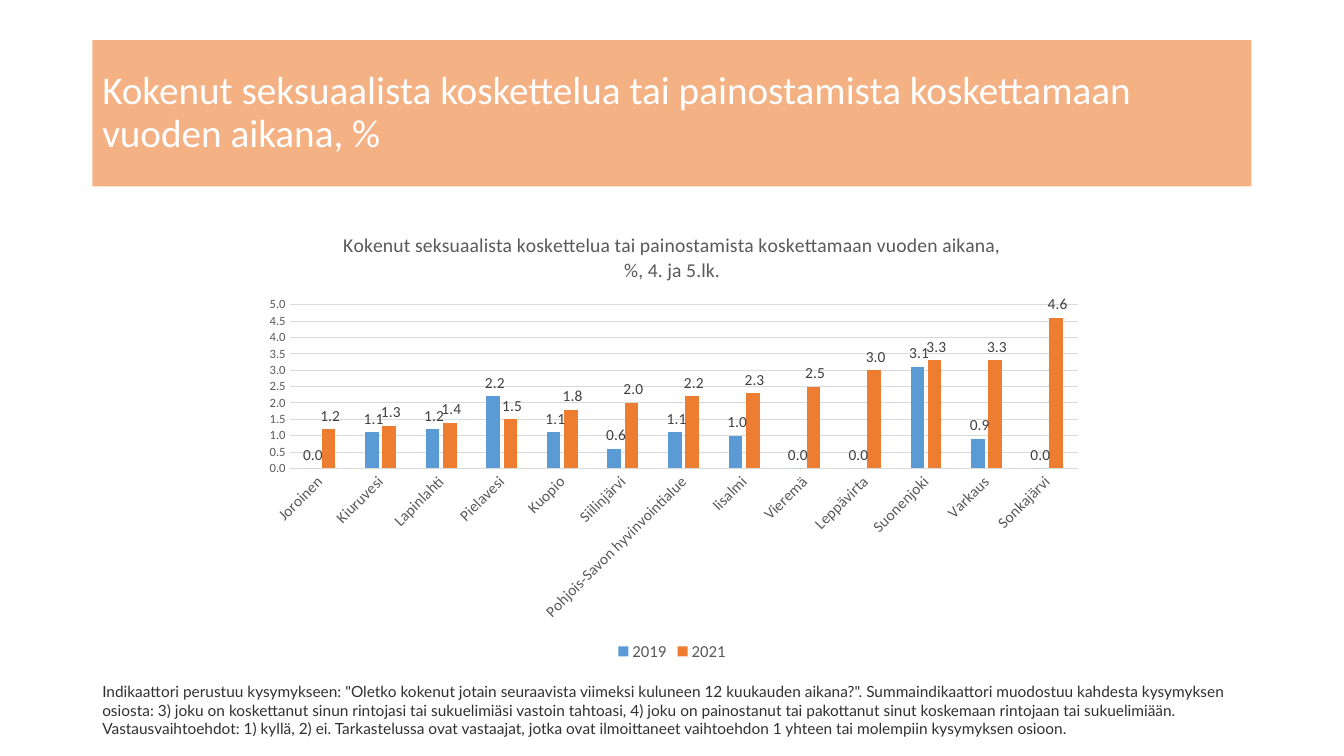
from pptx import Presentation
from pptx.chart.data import CategoryChartData
from pptx.dml.color import RGBColor
from pptx.enum.chart import XL_CHART_TYPE, XL_LABEL_POSITION, XL_LEGEND_POSITION, XL_TICK_MARK
from pptx.enum.shapes import MSO_SHAPE
from pptx.enum.text import MSO_ANCHOR, PP_ALIGN
from pptx.util import Pt

TITLE = "Kokenut seksuaalista koskettelua tai painostamista koskettamaan vuoden aikana, %"
CHART_TITLE = TITLE + ", 4. ja 5.lk."
FOOTNOTE = (
    'Indikaattori perustuu kysymykseen: "Oletko kokenut jotain seuraavista viimeksi kuluneen '
    '12 kuukauden aikana?". Summaindikaattori muodostuu kahdesta kysymyksen osiosta: '
    "3) joku on koskettanut sinun rintojasi tai sukuelimiäsi vastoin tahtoasi, "
    "4) joku on painostanut tai pakottanut sinut koskemaan rintojaan tai sukuelimiään. "
    "Vastausvaihtoehdot: 1) kyllä, 2) ei. Tarkastelussa ovat vastaajat, jotka ovat "
    "ilmoittaneet vaihtoehdon 1 yhteen tai molempiin kysymyksen osioon."
)
YEARS = ("2019", "2021")
RESULTS = [
    ("Joroinen", 0, 1.2),
    ("Kiuruvesi", 1.1, 1.3),
    ("Lapinlahti", 1.2, 1.4),
    ("Pielavesi", 2.2, 1.5),
    ("Kuopio", 1.1, 1.8),
    ("Siilinjärvi", 0.6, 2),
    ("Pohjois-Savon hyvinvointialue", 1.1, 2.2),
    ("Iisalmi", 1, 2.3),
    ("Vieremä", 0, 2.5),
    ("Leppävirta", 0, 3),
    ("Suonenjoki", 3.1, 3.3),
    ("Varkaus", 0.9, 3.3),
    ("Sonkajärvi", 0, 4.6),
]
NUMBER_FORMAT = r"#\ ##0.0"


class Theme:
    font, note_font = "Calibri", "Lato"
    banner, white, note = "F4B183", "FFFFFF", "303030"
    chart_text, label, line = "595959", "404040", "D9D9D9"
    series = ("5B9BD5", "ED7D31")
    title_size, chart_title_size, legend_size = 28, 14, 12
    small_size, value_axis_size = 11, 9


def style_font(font, size, color, name=Theme.font):
    font.name = name
    font.size = Pt(size)
    font.bold = False
    font.color.rgb = RGBColor.from_string(color)


def style_line(line):
    line.color.rgb = RGBColor.from_string(Theme.line)
    line.width = Pt(0.75)


def add_banner(slide):
    banner = slide.shapes.add_shape(MSO_SHAPE.RECTANGLE, Pt(66), Pt(28.75), Pt(828), Pt(104.4))
    banner.shadow.inherit = False
    banner.fill.solid()
    banner.fill.fore_color.rgb = RGBColor.from_string(Theme.banner)
    banner.line.fill.background()
    frame = banner.text_frame
    frame.word_wrap = True
    frame.vertical_anchor = MSO_ANCHOR.MIDDLE
    frame.text = TITLE
    para = frame.paragraphs[0]
    para.alignment = PP_ALIGN.LEFT
    para.line_spacing = 0.9
    style_font(para.runs[0].font, Theme.title_size, Theme.white)


def add_results_chart(slide):
    data = CategoryChartData(number_format=NUMBER_FORMAT)
    places, *columns = zip(*RESULTS)
    data.categories = places
    for year, values in zip(YEARS, columns):
        data.add_series(year, values)
    chart = slide.shapes.add_chart(
        XL_CHART_TYPE.COLUMN_CLUSTERED, Pt(178.5), Pt(152.75), Pt(603.25), Pt(322.5), data
    ).chart
    chart.font.name = Theme.font

    chart.has_title = True
    chart.chart_title.include_in_layout = False
    title = chart.chart_title.text_frame
    title.text = CHART_TITLE
    style_font(title.paragraphs[0].runs[0].font, Theme.chart_title_size, Theme.chart_text)

    chart.has_legend = True
    chart.legend.position = XL_LEGEND_POSITION.BOTTOM
    chart.legend.include_in_layout = False
    style_font(chart.legend.font, Theme.legend_size, Theme.chart_text)

    axes = ((chart.category_axis, Theme.small_size), (chart.value_axis, Theme.value_axis_size))
    for axis, size in axes:
        axis.major_tick_mark = axis.minor_tick_mark = XL_TICK_MARK.NONE
        style_font(axis.tick_labels.font, size, Theme.chart_text)
    places_axis, percent_axis = chart.category_axis, chart.value_axis
    style_line(places_axis.format.line)
    places_axis._element.txPr.bodyPr.set("rot", "-2700000")
    percent_axis.format.line.fill.background()
    style_line(percent_axis.major_gridlines.format.line)
    percent_axis.minimum_scale, percent_axis.maximum_scale = 0, 5
    percent_axis.major_unit = 0.5
    percent_axis.tick_labels.number_format = NUMBER_FORMAT
    percent_axis.tick_labels.number_format_is_linked = False

    plot = chart.plots[0]
    plot.gap_width, plot.overlap = 219, -27
    plot.vary_by_categories = False
    for series, color in zip(plot.series, Theme.series):
        series.format.fill.solid()
        series.format.fill.fore_color.rgb = RGBColor.from_string(color)
        labels = series.data_labels
        labels.show_value = True
        labels.position = XL_LABEL_POSITION.OUTSIDE_END
        labels.number_format = NUMBER_FORMAT
        labels.number_format_is_linked = False
        style_font(labels.font, Theme.small_size, Theme.label)


def add_footnote(slide):
    box = slide.shapes.add_textbox(Pt(66), Pt(483.75), Pt(831), Pt(47.5))
    frame = box.text_frame
    frame.word_wrap = True
    frame.text = FOOTNOTE
    style_font(frame.paragraphs[0].runs[0].font, Theme.small_size, Theme.note, Theme.note_font)


def main():
    deck = Presentation()
    deck.slide_width, deck.slide_height = Pt(960), Pt(540)
    slide = deck.slides.add_slide(deck.slide_layouts[6])
    add_banner(slide)
    add_results_chart(slide)
    add_footnote(slide)
    deck.save("out.pptx")


if __name__ == "__main__":
    main()
